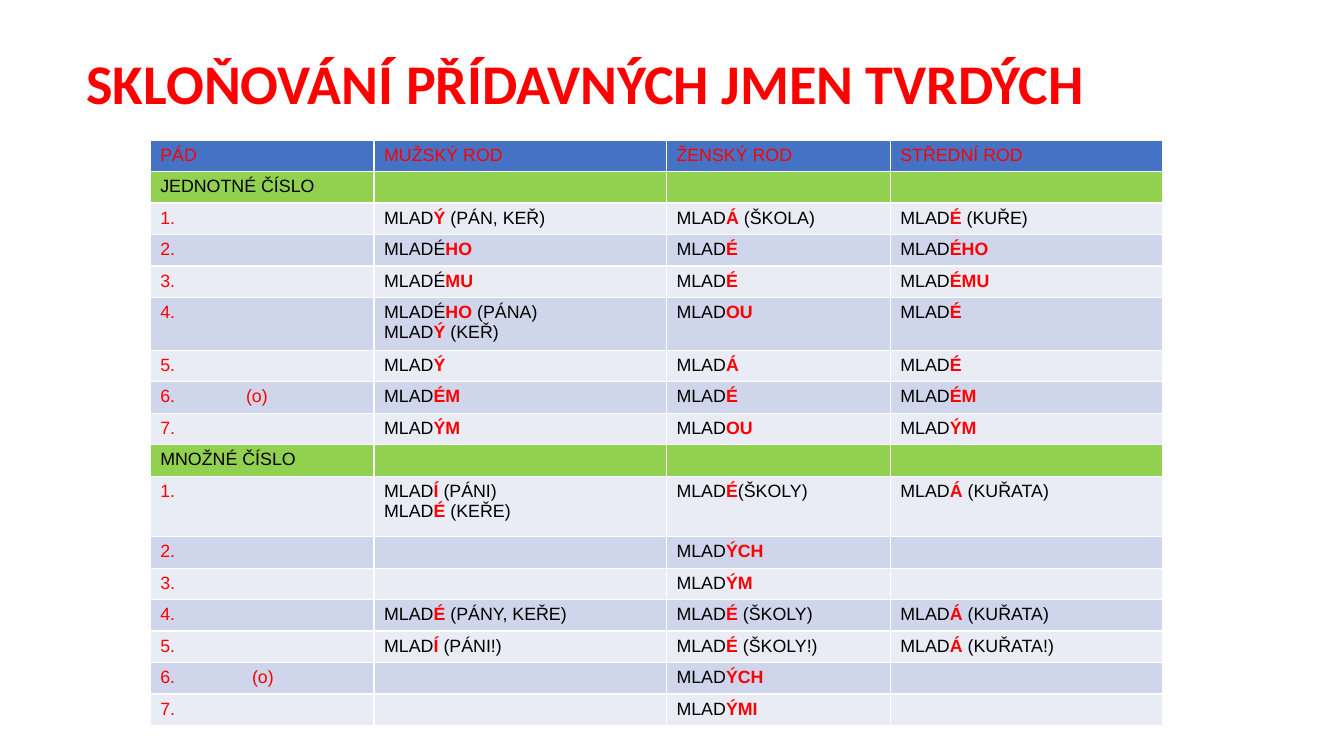
"""Build a slide with the Czech declension table of hard adjectives."""
from lxml.etree import SubElement
from pptx import Presentation
from pptx.dml.color import RGBColor
from pptx.enum.text import MSO_ANCHOR
from pptx.oxml.ns import qn
from pptx.util import Emu, Pt

PX = 9144
RED, BLACK = "FF0000", "000000"
HEADER, SECTION, LIGHT, DARK = "4472C4", "92D050", "E9EBF5", "CFD5EA"
CELL_SIZE = Pt(12.7)


def color(value):
    return RGBColor.from_string(value)


def add_run(paragraph, text, ink, **formats):
    run = paragraph.add_run()
    run.text = text
    run.font.color.rgb = color(ink)
    for name, value in formats.items():
        setattr(run.font, name, value)


presentation = Presentation()
presentation.slide_width = Emu(1333 * PX)
presentation.slide_height = Emu(750 * PX)
slide = presentation.slides.add_slide(presentation.slide_layouts[6])

title = slide.shapes.add_textbox(*(Emu(n * PX) for n in (76, 23, 1035, 125)))
title.text_frame.word_wrap = True
title.text_frame.vertical_anchor = MSO_ANCHOR.MIDDLE
heading = title.text_frame.paragraphs[0]
heading.line_spacing = 0.9
add_run(heading, "SKLOŇOVÁNÍ PŘÍDAVNÝCH JMEN TVRDÝCH", RED,
        name="Calibri", size=Pt(40), bold=True)

# Asterisks enclose the highlighted endings.
rows = [
    ("PÁD", "MUŽSKÝ ROD", "ŽENSKÝ ROD", "STŘEDNÍ ROD"),
    ("JEDNOTNÉ ČÍSLO", "", "", ""),
    ("1.", "MLAD*Ý* (PÁN, KEŘ)", "MLAD*Á *(ŠKOLA)", "MLAD*É *(KUŘE)"),
    ("2.", "MLADÉ*HO*", "MLAD*É*", "MLAD*ÉHO*"),
    ("3.", "MLADÉ*MU*", "MLAD*É*", "MLAD*ÉMU*"),
    ("4.", "MLADÉ*HO *(PÁNA)\nMLAD*Ý *(KEŘ)", "MLAD*OU*", "MLAD*É*"),
    ("5.", "MLAD*Ý*", "MLAD*Á*", "MLAD*É*"),
    ("6.\t(o)", "MLAD*ÉM*", "MLAD*É*", "MLAD*ÉM*"),
    ("7.", "MLAD*ÝM*", "MLAD*OU*", "MLAD*ÝM*"),
    ("MNOŽNÉ ČÍSLO", "", "", ""),
    ("1.", "MLAD*Í* (PÁNI)\nMLAD*É* (KEŘE)", "MLAD*É*(ŠKOLY)", "MLAD*Á *(KUŘATA)"),
    ("2.", "", "MLAD*ÝCH*", ""),
    ("3.", "", "MLAD*ÝM*", ""),
    ("4.", "MLAD*É *(PÁNY, KEŘE)", "MLAD*É *(ŠKOLY)", "MLAD*Á *(KUŘATA)"),
    ("5.", "MLAD*Í *(PÁNI!)", "MLAD*É *(ŠKOLY!)", "MLAD*Á *(KUŘATA!)"),
    ("6.\t(o)", "", "MLAD*ÝCH*", ""),
    ("7.", "", "MLAD*ÝMI*", ""),
]
column_widths = (222, 290, 222, 270)
special_heights = {5: 51, 10: 60}
special_fills = {0: HEADER, 1: SECTION, 9: SECTION}
tab_stops = {7: 85, 15: 91}

table = slide.shapes.add_table(
    len(rows), len(column_widths),
    *(Emu(n * PX) for n in (149, 139, sum(column_widths), 561))).table
for column, width in zip(table.columns, column_widths):
    column.width = Emu(width * PX)

for row_index, texts in enumerate(rows):
    table.rows[row_index].height = Emu(special_heights.get(row_index, 30) * PX)
    band = DARK if row_index % 2 else LIGHT
    fill = special_fills.get(row_index, band)
    for column_index, text in enumerate(texts):
        cell = table.cell(row_index, column_index)
        cell.fill.solid()
        cell.fill.fore_color.rgb = color(fill)
        is_label = fill == HEADER or (column_index == 0 and fill != SECTION)
        for line_index, line in enumerate(text.split("\n")):
            frame = cell.text_frame
            paragraph = frame.add_paragraph() if line_index else frame.paragraphs[0]
            if "\t" in line:
                tabs = SubElement(paragraph._p.get_or_add_pPr(), qn("a:tabLst"))
                SubElement(tabs, qn("a:tab"), pos=str(tab_stops[row_index] * PX), algn="l")
            for piece_index, piece in enumerate(line.split("*")):
                is_ending = piece_index % 2 == 1
                if piece:
                    add_run(paragraph, piece, RED if is_label or is_ending else BLACK,
                            name="Arial", size=CELL_SIZE, bold=is_ending)
            if not line:
                mark = SubElement(paragraph._p, qn("a:endParaRPr"), sz="1270")
                SubElement(mark, qn("a:latin"), typeface="Arial")

presentation.save("out.pptx")
